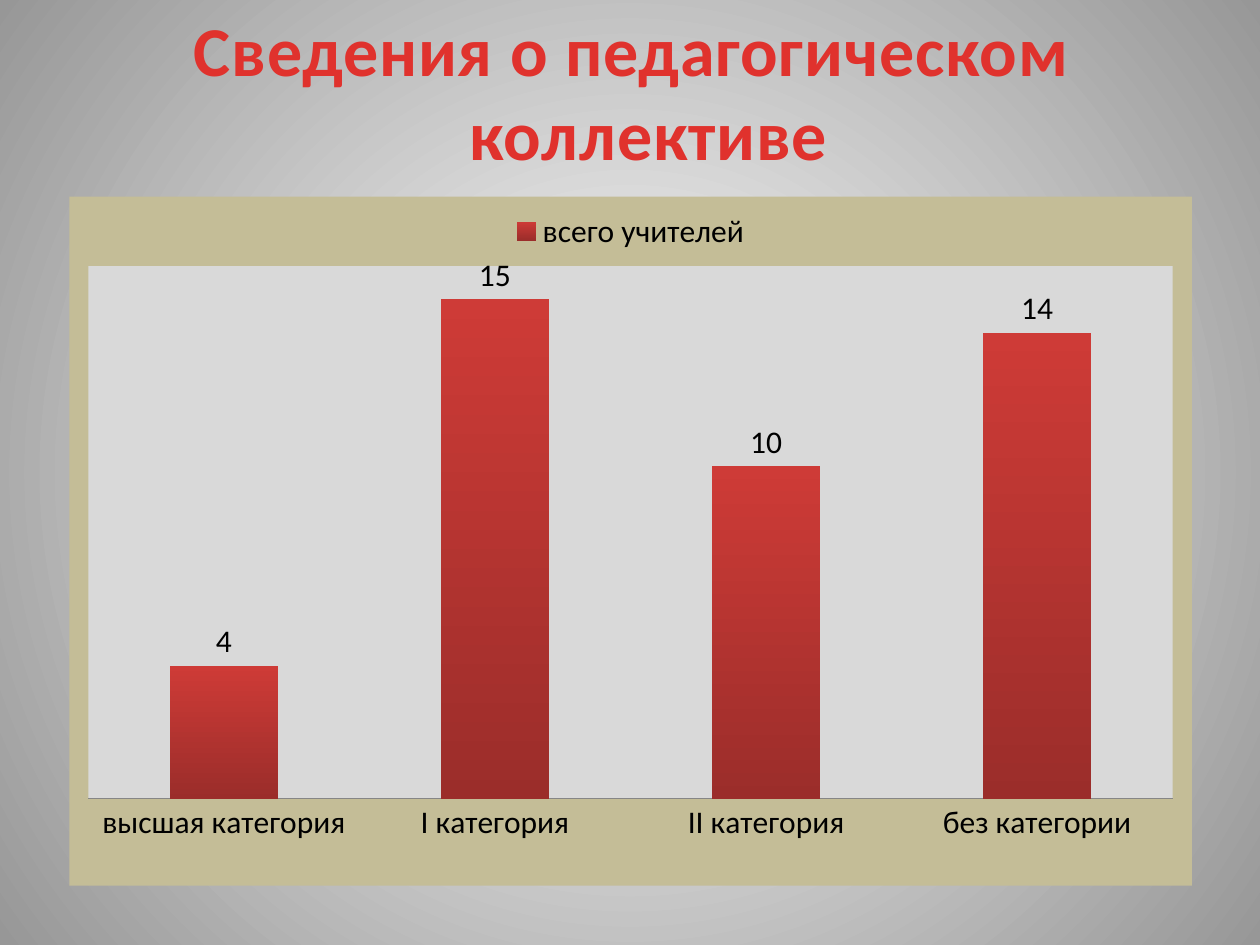
from lxml import etree
from pptx import Presentation, util as u
from pptx.chart.data import CategoryChartData
from pptx.dml.color import RGBColor
from pptx.enum import chart as ch, text
from pptx.oxml import parse_xml
from pptx.oxml.ns import nsdecls, qn

FONT = "Calibri"
TITLE = ["Сведения о педагогическом ", " коллективе"]
SERIES = "всего учителей"
TEACHERS = {"высшая категория": 4, "I категория": 15,
            "II категория": 10, "без категории": 14}


def rgb(color):
    return RGBColor.from_string(color)


def set_gradient(fill, first, last):
    fill.gradient()
    for stop, color in zip(fill.gradient_stops, (first, last)):
        stop.color.rgb = rgb(color)


def set_background(slide):
    """Radial gradient from the centre of the slide."""
    fill = slide.background.fill
    set_gradient(fill, "FFFFFF", "979797")
    lin = slide._element.find(".//" + qn("a:lin"))
    lin.getparent().replace(lin, parse_xml(
        f'<a:path {nsdecls("a")} path="circle">'
        '<a:fillToRect l="50000" t="50000" r="50000" b="50000"/></a:path>'))


def area_fill(color):
    return parse_xml(
        f'<c:spPr {nsdecls("c", "a")}><a:solidFill><a:srgbClr val="{color}"/>'
        '</a:solidFill><a:ln><a:noFill/></a:ln></c:spPr>')


def place_plot(plot_area, **box):
    """Fix the inner plot area as shares of the chart."""
    old = plot_area.find(qn("c:layout"))
    if old is not None:
        plot_area.remove(old)
    layout = parse_xml(f'<c:layout {nsdecls("c")}><c:manualLayout/></c:layout>')
    modes = dict(layoutTarget="inner", xMode="edge", yMode="edge")
    for tag, val in {**modes, **box}.items():
        etree.SubElement(layout[0], qn("c:" + tag)).set("val", str(val))
    plot_area.insert(0, layout)


def add_title(slide, *box):
    tf = slide.shapes.add_textbox(*map(u.Inches, box)).text_frame
    tf.word_wrap = True
    tf.vertical_anchor = text.MSO_ANCHOR.TOP
    tf.text = "\n".join(TITLE)
    for p in tf.paragraphs:
        p.alignment = text.PP_ALIGN.CENTER
        p.font.name, p.font.size, p.font.bold = FONT, u.Pt(40), True
        p.font.color.rgb = rgb("E0322D")
        for r in p.runs:
            r._r.get_or_add_rPr().set("spc", "50")


def add_teacher_chart(slide, *box):
    data = CategoryChartData()
    data.categories = list(TEACHERS)
    data.add_series(SERIES, list(TEACHERS.values()))
    chart = slide.shapes.add_chart(
        ch.XL_CHART_TYPE.COLUMN_CLUSTERED, *map(u.Inches, box), data).chart
    chart.has_title = False
    chart.font.name, chart.font.size = FONT, u.Pt(18)
    chart.font.color.rgb = rgb("000000")
    chart.has_legend = True
    chart.legend.position = ch.XL_LEGEND_POSITION.TOP
    chart.legend.include_in_layout = False

    axis = chart.category_axis
    axis.major_tick_mark = ch.XL_TICK_MARK.NONE
    axis.format.line.color.rgb = rgb("868686")
    values = chart.value_axis
    values.visible = values.has_major_gridlines = False
    values.minimum_scale, values.maximum_scale = 0, 16

    plot = chart.plots[0]
    plot.gap_width, plot.overlap, plot.vary_by_categories = 150, -25, False
    plot.has_data_labels = True
    plot.data_labels.show_value = True
    plot.data_labels.position = ch.XL_LABEL_POSITION.OUTSIDE_END
    bars = plot.series[0].format.fill
    set_gradient(bars, "CE3B37", "9B2D2A")
    bars.gradient_angle = 270

    root = chart._chartSpace
    root.find(qn("c:chart")).addnext(area_fill("C4BD97"))
    plot_area = root.find(".//" + qn("c:plotArea"))
    plot_area.append(area_fill("D9D9D9"))
    place_plot(plot_area, x=0.017, y=0.101, w=0.966, h=0.773)


def main():
    prs = Presentation()
    prs.slide_width, prs.slide_height = u.Inches(10), u.Inches(7.5)
    slide = prs.slides.add_slide(prs.slide_layouts[6])
    set_background(slide)
    add_teacher_chart(slide, 0.55, 1.56, 8.91, 5.47)
    add_title(slide, 0.55, 0, 9.06, 2.12)
    prs.save("out.pptx")


if __name__ == "__main__":
    main()
